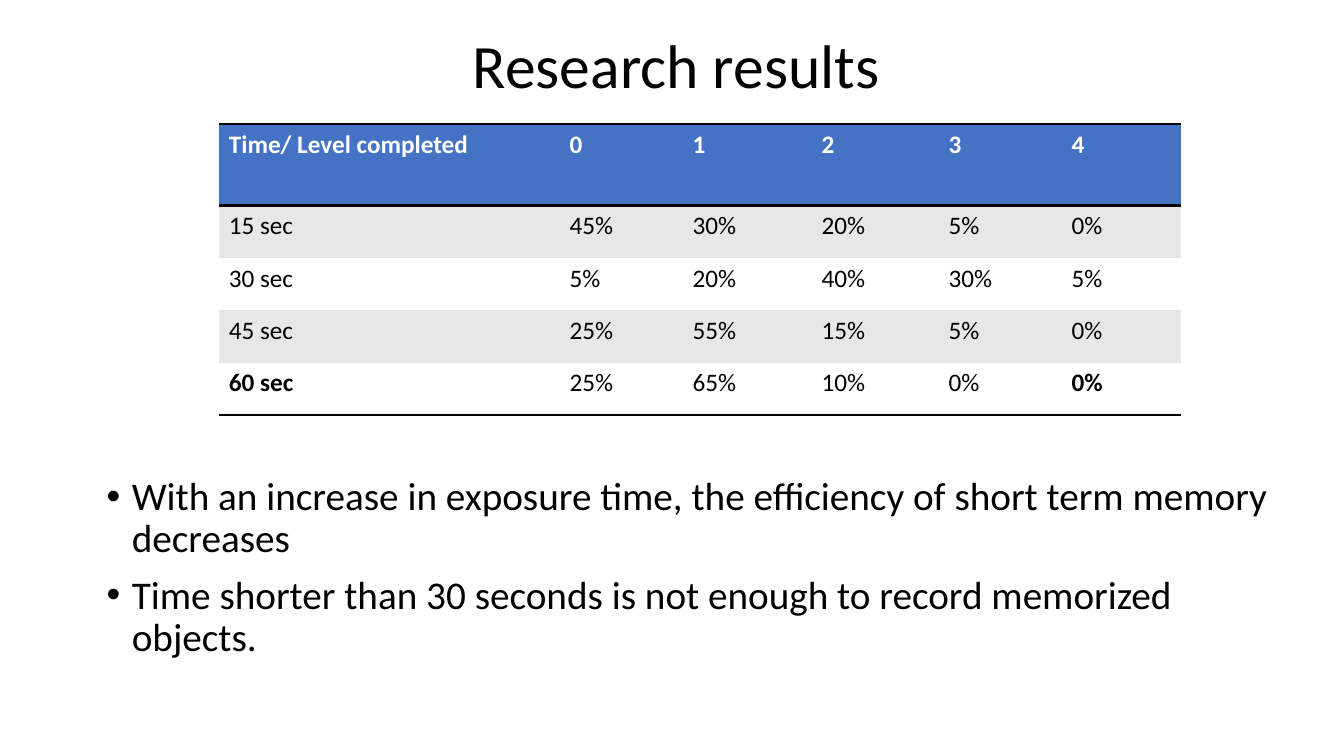
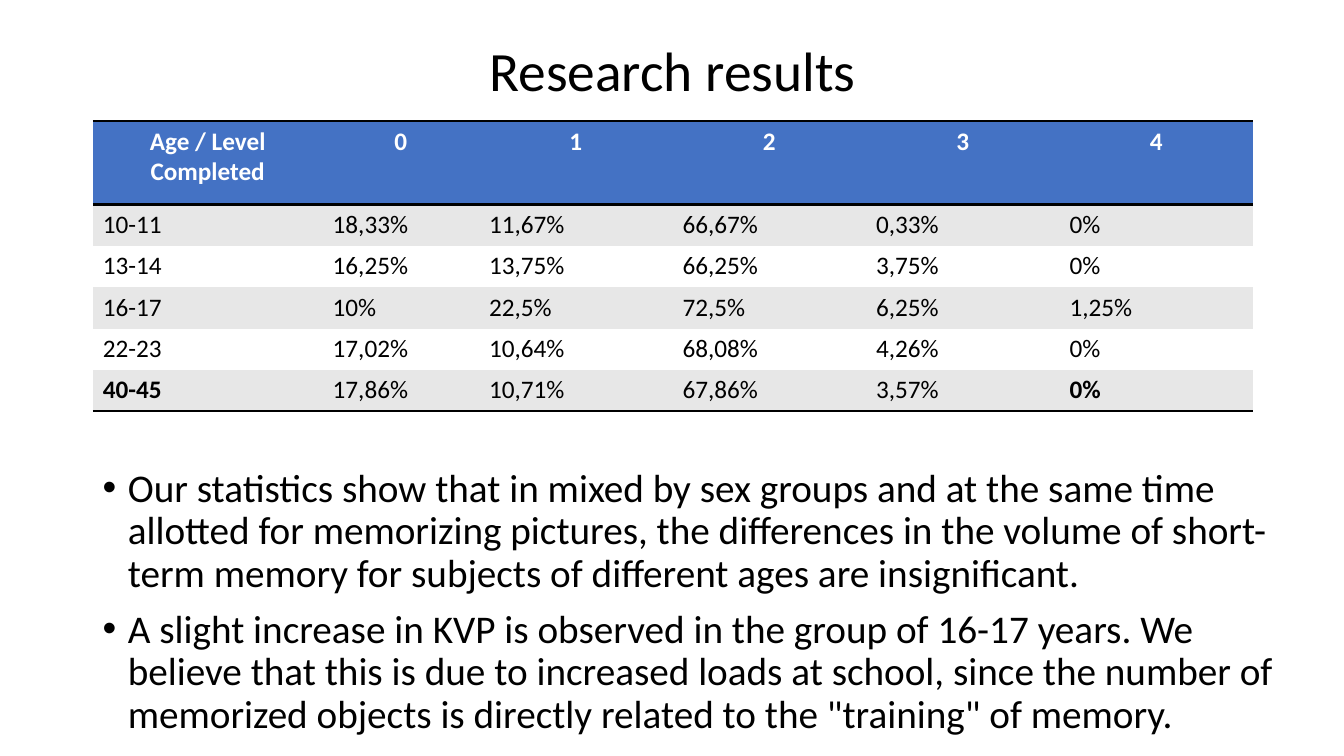
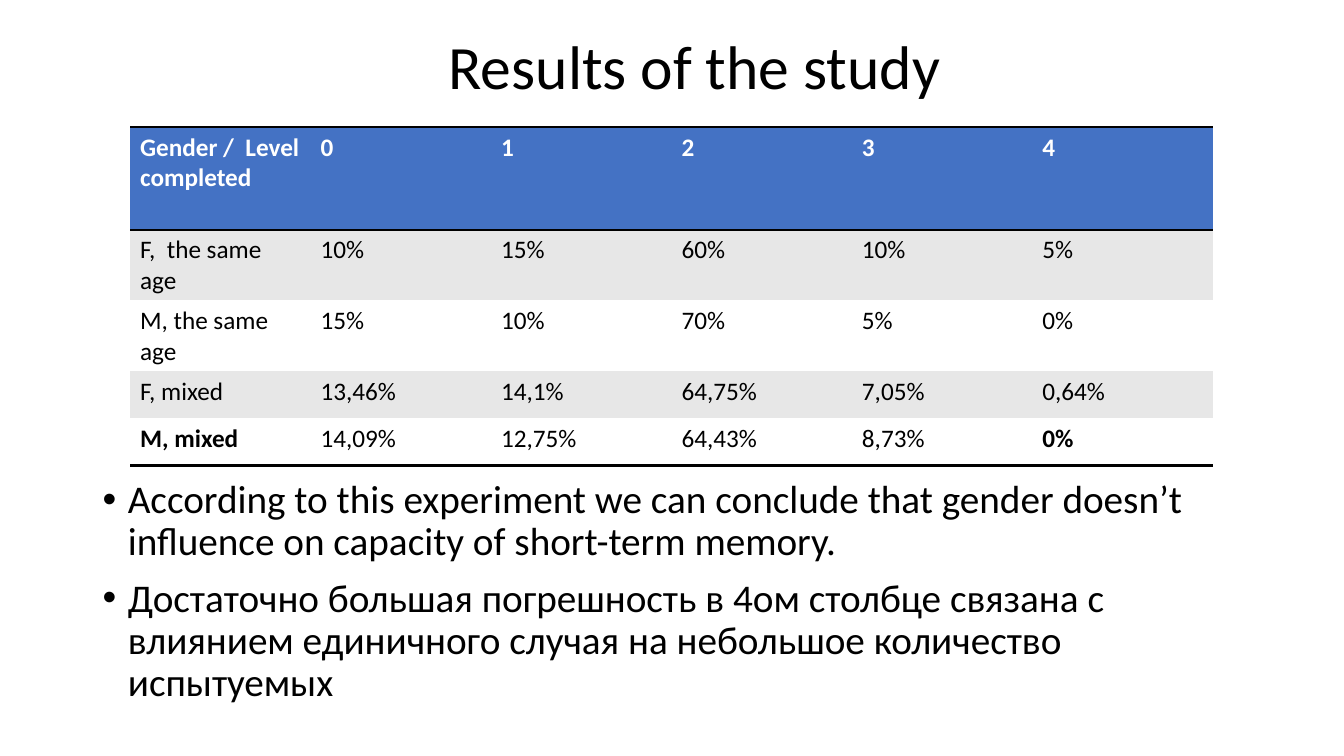
from lxml.etree import SubElement
from pptx import Presentation
from pptx.dml.color import RGBColor
from pptx.enum.text import MSO_ANCHOR as Anchor, PP_ALIGN as Align
from pptx.oxml import parse_xml
from pptx.oxml.ns import nsdecls, qn
from pptx.util import Emu, Pt

BLACK = RGBColor(0x00, 0x00, 0x00)
WHITE = RGBColor(0xFF, 0xFF, 0xFF)
BLUE = RGBColor(0x44, 0x72, 0xC4)
GREY = RGBColor(0xE7, 0xE7, 0xE7)
NO_GRID_STYLE = "{2D5ABB26-0587-4C30-8999-92F81FD0307C}"
LEVELS = ["0", "1", "2", "3", "4"]


def px(length):
    return Emu(length * 9144)


class Deck:
    font = "Calibri"
    body_size = 28
    table_size = 18
    rule_width = Pt(2)

    def __init__(self):
        self.presentation = Presentation()
        self.presentation.slide_width = px(1333)
        self.presentation.slide_height = px(750)
        self.slide = None

    def add_slide(self):
        layout = self.presentation.slide_layouts[6]
        self.slide = self.presentation.slides.add_slide(layout)

    def format(self, paragraph, size, color=BLACK, bold=False):
        for run in paragraph.runs:
            run.font.name = self.font
            run.font.size = Pt(size)
            run.font.color.rgb = color
            run.font.bold = bold

    def text_frame(self, box):
        shape = self.slide.shapes.add_textbox(*map(px, box))
        shape.text_frame.word_wrap = True
        return shape.text_frame

    def title(self, text, box, size=44):
        frame = self.text_frame(box)
        frame.vertical_anchor = Anchor.MIDDLE
        frame.text = text
        paragraph = frame.paragraphs[0]
        paragraph.alignment = Align.CENTER
        paragraph.line_spacing = 0.9
        self.format(paragraph, size)

    def bullets(self, texts, box):
        frame = self.text_frame(box)
        frame.text = "\n".join(texts)
        for paragraph in frame.paragraphs:
            paragraph.line_spacing = 0.9
            paragraph.space_before = Pt(10)
            self.format(paragraph, self.body_size)
            properties = paragraph._p.get_or_add_pPr()
            properties.set("marL", str(px(25)))
            properties.set("indent", str(-px(25)))
            SubElement(properties, qn("a:buFont")).set("typeface", "Arial")
            SubElement(properties, qn("a:buChar")).set("char", "•")

    def rules(self, cell, sides):
        for position, side in enumerate(sides):
            line = parse_xml(
                f'<a:ln{side} {nsdecls("a")} w="{self.rule_width}">'
                f'<a:solidFill><a:srgbClr val="{BLACK}"/></a:solidFill></a:ln{side}>'
            )
            cell._tc.get_or_add_tcPr().insert(position, line)

    def table(self, rows, left, top, widths, header_height, row_height,
              header_align=Align.LEFT):
        heights = [header_height] + [row_height] * (len(rows) - 1)
        shape = self.slide.shapes.add_table(
            len(rows), len(widths), px(left), px(top), px(sum(widths)), px(sum(heights)))
        shape.element.find(".//" + qn("a:tableStyleId")).text = NO_GRID_STYLE
        table = shape.table
        for column, width in zip(table.columns, widths):
            column.width = px(width)
        for row, height in zip(table.rows, heights):
            row.height = px(height)
        last_row, last_column = len(rows) - 1, len(widths) - 1
        for row_index, values in enumerate(rows):
            header = row_index == 0
            last = row_index == last_row
            fill = BLUE if header else GREY if row_index % 2 else WHITE
            for column_index, value in enumerate(values):
                cell = table.cell(row_index, column_index)
                cell.text = value
                cell.fill.solid()
                cell.fill.fore_color.rgb = fill
                paragraph = cell.text_frame.paragraphs[0]
                paragraph.alignment = header_align if header else Align.LEFT
                bold = header or (last and column_index in (0, last_column))
                self.format(paragraph, self.table_size, WHITE if header else BLACK, bold)
                self.rules(cell, "TB" if header else "B" if last else "")


def exposure_slide(deck):
    deck.add_slide()
    deck.title("Research results", (96, 12, 1150, 111))
    deck.table([
        ["Time/ Level completed", *LEVELS],
        ["15 sec", "45%", "30%", "20%", "5%", "0%"],
        ["30 sec", "5%", "20%", "40%", "30%", "5%"],
        ["45 sec", "25%", "55%", "15%", "5%", "0%"],
        ["60 sec", "25%", "65%", "10%", "0%", "0%"],
    ], 217, 123, [338, 122, 128, 126, 122, 118], 81, 52)
    deck.bullets([
        "With an increase in exposure time, the efficiency of short term memory decreases",
        "Time shorter than 30 seconds is not enough to record memorized objects.",
    ], (96, 468, 1196, 247))


def age_slide(deck):
    deck.add_slide()
    deck.title("Research results", (92, 40, 1150, 65), 39.6)
    deck.table([
        ["Age / Level Completed", *LEVELS],
        ["10-11", "18,33%", "11,67%", "66,67%", "0,33%", "0%"],
        ["13-14", "16,25%", "13,75%", "66,25%", "3,75%", "0%"],
        ["16-17", "10%", "22,5%", "72,5%", "6,25%", "1,25%"],
        ["22-23", "17,02%", "10,64%", "68,08%", "4,26%", "0%"],
        ["40-45", "17,86%", "10,71%", "67,86%", "3,57%", "0%"],
    ], 92, 120, [228, 155] + [192] * 4, 83, 41, Align.CENTER)
    deck.bullets([
        "Our statistics show that in mixed by sex groups and at the same time allotted "
        "for memorizing pictures, the differences in the volume of short-term memory "
        "for subjects of different ages are insignificant.",
        "A slight increase in KVP is observed in the group of 16-17 years. We believe "
        "that this is due to increased loads at school, since the number of memorized "
        'objects is directly related to the "training" of memory.',
    ], (92, 460, 1204, 290))


def gender_slide(deck):
    deck.add_slide()
    deck.title("Results of the study", (114, 13, 1150, 113))
    deck.table([
        ["Gender /  Level completed", *LEVELS],
        ["F,  the same age", "10%", "15%", "60%", "10%", "5%"],
        ["М, the same age", "15%", "10%", "70%", "5%", "0%"],
        ["F, mixed", "13,46%", "14,1%", "64,75%", "7,05%", "0,64%"],
        ["М, mixed", "14,09%", "12,75%", "64,43%", "8,73%", "0%"],
    ], 129, 126, [179] * 6, 102, 47)
    deck.bullets([
        "According to this experiment we can conclude that gender doesn’t influence "
        "on capacity of short-term memory.",
        "Достаточно большая погрешность в 4ом столбце связана с влиянием единичного "
        "случая на небольшое количество испытуемых",
    ], (92, 471, 1150, 255))


def main():
    deck = Deck()
    exposure_slide(deck)
    age_slide(deck)
    gender_slide(deck)
    deck.presentation.save("out.pptx")


if __name__ == "__main__":
    main()
